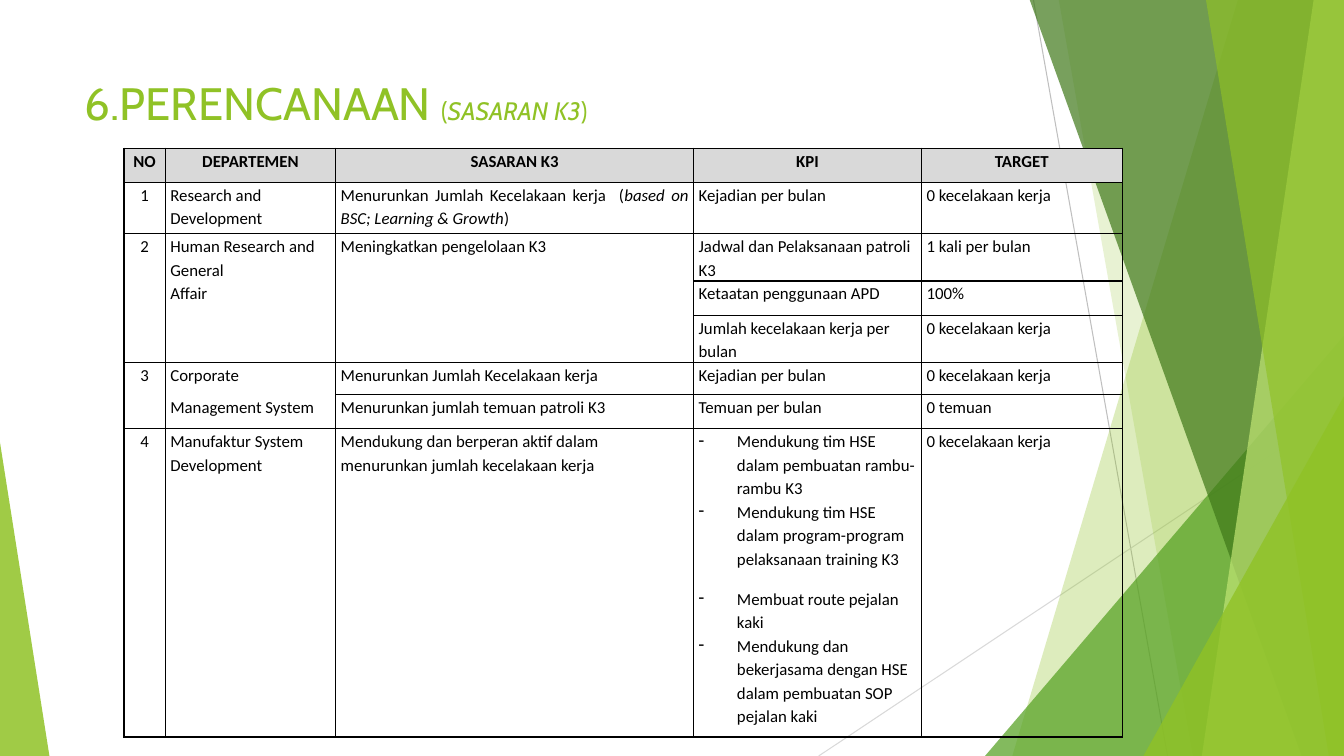
from pptx import Presentation
from pptx.dml.color import RGBColor
from pptx.enum.shapes import MSO_CONNECTOR as CONN, MSO_SHAPE as SHAPE
from pptx.enum.text import MSO_ANCHOR as ANCHOR, PP_ALIGN as ALIGN
from pptx.oxml.ns import qn
from pptx.util import Inches, Pt
from lxml.etree import SubElement, Element

LIME = RGBColor(0x90, 0xC2, 0x26)
GREEN = RGBColor(0x54, 0xA0, 0x21)
DARK_GREEN = RGBColor(0x3F, 0x78, 0x19)
PALE_LIME = RGBColor(0xC0, 0xE4, 0x74)
LINE_GRAY = RGBColor(0xBF, 0xBF, 0xBF)
LIGHT_GRAY = RGBColor(0xD9, 0xD9, 0xD9)
BLACK = RGBColor(0, 0, 0)

TOP, BOTTOM, RIGHT = -0.01, 7.5, 13.33

# Slanted bands: top-left x, bottom-left x, colour, opacity in percent
BANDS_BACK = [(12.28, 10.04, LIME, 30), (10.5, 11.83, LIME, 20)]
BANDS_FRONT = [(10.21, 12.91, DARK_GREEN, 70), (13.03, 11.92, PALE_LIME, 70),
               (11.96, 13.18, LIME, 65)]

COL_WIDTHS = [0.41, 1.69, 3.55, 2.26, 1.99]
ROW_HEIGHTS = [0.34, 0.51, 0.4, 0.34, 0.34, 0.32, 0.34, 0.68, 0.86, 0.34, 1.03]
ROWS = [
    ["NO", "DEPARTEMEN", "SASARAN K3", "KPI", "TARGET"],
    ["1", "Research and Development",
     ["Menurunkan Jumlah Kecelakaan kerja  (", "based on BSC; Learning & Growth", ")"],
     "Kejadian per bulan", "0 kecelakaan kerja"],
    ["2", "Human Research and General", "Meningkatkan pengelolaan K3",
     "Jadwal dan Pelaksanaan patroli K3", "1 kali per bulan"],
    ["", "Affair", "", "Ketaatan penggunaan APD", "100%"],
    ["", "", "", "Jumlah kecelakaan kerja per bulan", "0 kecelakaan kerja"],
    ["3", "Corporate", "Menurunkan Jumlah Kecelakaan kerja",
     "Kejadian per bulan", "0 kecelakaan kerja"],
    ["", "Management System", "Menurunkan jumlah temuan patroli K3",
     "Temuan per bulan", "0 temuan"],
    ["4", "Manufaktur System Development",
     "Mendukung dan berperan aktif dalam menurunkan jumlah kecelakaan kerja",
     "Mendukung tim HSE dalam pembuatan rambu-rambu K3", "0 kecelakaan kerja"],
    ["", "", "", "Mendukung tim HSE dalam program-program pelaksanaan training K3", ""],
    ["", "", "", "Membuat route pejalan kaki", ""],
    ["", "", "", "Mendukung dan bekerjasama dengan HSE dalam pembuatan SOP pejalan kaki", ""],
]
# Departments spanning several rows: first row, last row, columns without inner rules
GROUPS = [(2, 4, 3), (5, 6, 2), (7, 10, 5)]
KPI_COL, FIRST_BULLET_ROW, JUSTIFIED_ROW = 3, 7, 1


def add_text(p, text, size=12, font="Calibri", color=BLACK, bold=False, italic=False):
    r = p.add_run()
    r.text = text
    r.font.size = Pt(size)
    r.font.name = font
    r.font.color.rgb = color
    r.font.bold = bold
    r.font.italic = italic


def paint(s, color, opacity):
    s.shadow.inherit = False
    s.line.fill.background()
    s.fill.solid()
    s.fill.fore_color.rgb = color
    clr = s._element.spPr.find(qn("a:solidFill"))[0]
    SubElement(clr, qn("a:alpha")).set("val", str(opacity * 1000))


def add_band(slide, x_top, x_bottom, color, opacity):
    fb = slide.shapes.build_freeform(Inches(x_top), Inches(TOP))
    corners = [(RIGHT, TOP), (RIGHT, BOTTOM), (x_bottom, BOTTOM)]
    fb.add_line_segments([(Inches(x), Inches(y)) for x, y in corners], close=True)
    paint(fb.convert_to_shape(), color, opacity)


def add_triangle(slide, x, y, w, apex, color, opacity):
    s = slide.shapes.add_shape(SHAPE.ISOSCELES_TRIANGLE, Inches(x), Inches(y),
                               Inches(w), Inches(BOTTOM - y))
    s.adjustments[0] = apex
    paint(s, color, opacity)


def add_line(slide, x1, y1, x2, y2, color):
    s = slide.shapes.add_connector(CONN.STRAIGHT, Inches(x1), Inches(y1),
                                   Inches(x2), Inches(y2))
    s.line.color.rgb = color
    s.line.width = Pt(0.75)
    SubElement(s._element.spPr, qn("a:effectLst"))


def add_decoration(slide):
    add_line(slide, 10.25, 0, 11.58, 7.5, LINE_GRAY)
    add_line(slide, 13.33, 4.03, 8.12, 7.5, LIGHT_GRAY)
    for band in BANDS_BACK:
        add_band(slide, *band)
    add_triangle(slide, 9.77, 3.33, 3.56, 1, GREEN, 72)
    for band in BANDS_FRONT:
        add_band(slide, *band)
    add_triangle(slide, 11.34, 3.93, 1.99, 1, LIME, 80)
    add_triangle(slide, 0, 4.39, 0.49, 0, LIME, 85)


def add_title(slide):
    s = slide.shapes.title
    s.left, s.top, s.width, s.height = Inches(0.74), Inches(0.67), Inches(9.4), Inches(0.7)
    tf = s.text_frame
    tf.vertical_anchor = ANCHOR.MIDDLE
    p = tf.paragraphs[0]
    p.alignment = ALIGN.LEFT
    add_text(p, "6.PERENCANAAN ", size=32.4, font="Cabin", color=LIME)
    for text in ("(", "SASARAN K3", ")"):
        add_text(p, text, size=18, font="Cabin", color=LIME, italic=len(text) > 1)


def set_borders(cell, top, bottom):
    """Draw the side rules always, the top and bottom rules on request."""
    sides = [("L", True), ("R", True), ("T", top), ("B", bottom)]
    for i, (side, shown) in enumerate(sides):
        ln = Element(qn("a:ln" + side), w=str(Pt(1)))
        if shown:
            fill = SubElement(ln, qn("a:solidFill"))
            SubElement(fill, qn("a:srgbClr")).set("val", str(BLACK))
        else:
            SubElement(ln, qn("a:noFill"))
        cell._tc.get_or_add_tcPr().insert(i, ln)


def set_bullet(p):
    pPr = p._p.get_or_add_pPr()
    pPr.set("marL", str(Inches(0.38)))
    pPr.set("indent", str(-Inches(0.38)))
    SubElement(pPr, qn("a:buChar")).set("char", "-")


def fill_cell(cell, row, col, content):
    cell.margin_left = cell.margin_right = Inches(0.05)
    cell.margin_top = cell.margin_bottom = 0
    if row == 0:
        cell.fill.solid()
        cell.fill.fore_color.rgb = LIGHT_GRAY
    else:
        cell.fill.background()
    inside = [g for g in GROUPS if g[0] <= row <= g[1] and col < g[2]]
    set_borders(cell, top=all(row == g[0] for g in inside),
                bottom=all(row == g[1] for g in inside))
    if not content:
        return
    p = cell.text_frame.paragraphs[0]
    p.line_spacing = 1.15
    p.space_after = Pt(8)
    if row == 0 or col == 0:
        p.alignment = ALIGN.CENTER
    elif row == JUSTIFIED_ROW and col > 1:
        p.alignment = ALIGN.JUSTIFY
    if col == KPI_COL and row >= FIRST_BULLET_ROW:
        set_bullet(p)
    parts = [content] if isinstance(content, str) else content
    for i, text in enumerate(parts):
        add_text(p, text, bold=row == 0, italic=i == 1)


def add_targets_table(slide):
    frame = slide.shapes.add_table(len(ROWS), len(COL_WIDTHS), Inches(1.23), Inches(1.47),
                                   Inches(sum(COL_WIDTHS)), Inches(sum(ROW_HEIGHTS)))
    table = frame.table
    table.first_row = table.horz_banding = False
    for column, width in zip(table.columns, COL_WIDTHS):
        column.width = Inches(width)
    for table_row, height in zip(table.rows, ROW_HEIGHTS):
        table_row.height = Inches(height)
    for row, contents in enumerate(ROWS):
        for col, content in enumerate(contents):
            fill_cell(table.cell(row, col), row, col, content)


def main():
    prs = Presentation()
    prs.slide_width, prs.slide_height = Inches(13.33), Inches(7.5)
    slide = prs.slides.add_slide(prs.slide_layouts[5])  # title only
    add_decoration(slide)
    add_title(slide)
    add_targets_table(slide)
    prs.save("out.pptx")


if __name__ == "__main__":
    main()
